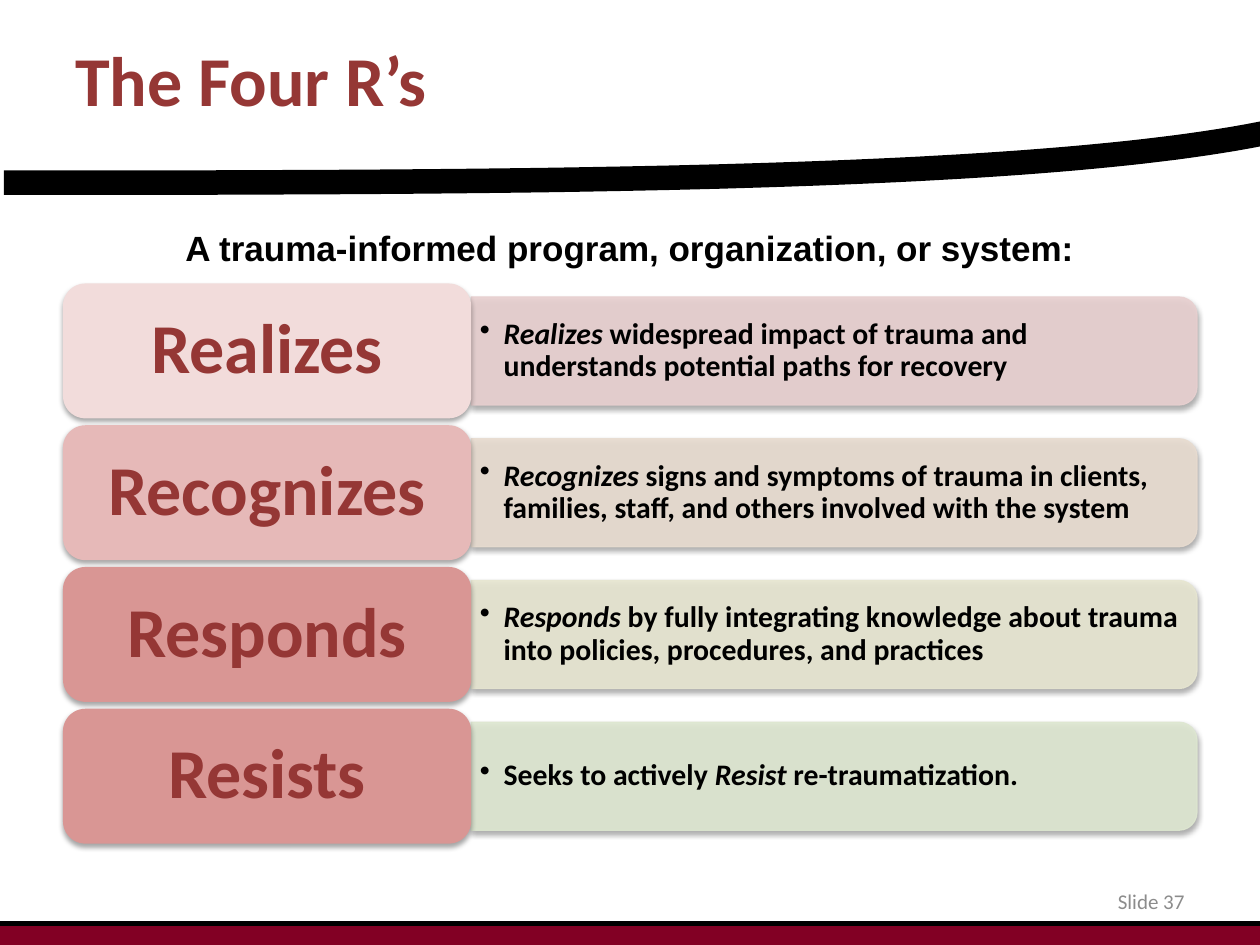
import pptx
import pptx.util
import pptx.dml.color
import pptx.enum.shapes
import pptx.enum.text
import pptx.oxml
from pptx.oxml.ns import nsdecls, qn

Pt = pptx.util.Pt
SHAPE = pptx.enum.shapes.MSO_SHAPE
ALIGN = pptx.enum.text.PP_ALIGN
ANCHOR = pptx.enum.text.MSO_ANCHOR

TITLE = "The Four R’s"
LEAD = "A trauma-informed program, organization, or system:"
PAGE = "Slide 37"
# label, label fill, bar fill, [(text, italic)]
ROWS = [
    ("Realizes", "F2DCDB", "E8D0D0",
     [("Realizes", True),
      (" widespread impact of trauma and understands potential paths for recovery", False)]),
    ("Recognizes", "E6B9B8", "E8DCD0",
     [("Recognizes", True),
      (" signs and symptoms of trauma in clients, families, staff, and others "
       "involved with the system", False)]),
    ("Responds", "D99694", "E7E6D1",
     [("Responds", True),
      (" by fully integrating knowledge about trauma into policies, procedures, "
       "and practices", False)]),
    ("Resists", "D99694", "DEE7D1",
     [("Seeks to actively ", False), ("Resist", True), (" re-traumatization.", False)]),
]
RED, BLACK, GRAY, MAROON = "953735", "000000", "8C8C8C", "820024"

WIDTH, HEIGHT = 720, 540
LEFT, TOP, PITCH = 36, 162, 81
LABEL_W, LABEL_H = 233.3, 77.1
BAR_W, BAR_H = 414.7, 61.7
CURVE = [(2.2, 104.4), (306.7, 104.4), (612, 103.7), (740.9, 72)]  # Bezier points
CURVE_STEPS = 60


def rgb(value):
    return pptx.dml.color.RGBColor.from_string(value)


def xml(tag, inner="", attrs=""):
    return pptx.oxml.parse_xml(f"<a:{tag} {nsdecls('a')} {attrs}>{inner}</a:{tag}>")


def add_shadow(sp):
    sp.shadow.inherit = False
    sp._element.spPr.find(qn("a:effectLst")).append(xml(
        "outerShdw", '<a:srgbClr val="000000"><a:alpha val="35000"/></a:srgbClr>',
        f'blurRad="{Pt(3.1)}" dist="{Pt(1.8)}" dir="5400000" rotWithShape="0"'))


def add_filled(s, kind, x, y, w, h, color):
    sp = s.shapes.add_shape(kind, Pt(x), Pt(y), Pt(w), Pt(h))
    sp.shadow.inherit = False
    sp.fill.solid()
    sp.fill.fore_color.rgb = rgb(color)
    sp.line.fill.background()
    return sp


def write(sp, runs, size, color, bold=True, font="Calibri", align=ALIGN.LEFT,
          anchor=ANCHOR.MIDDLE, inset=(7.2, 3.6), spacing=None):
    """Fill one paragraph with (text, italic) runs and return it."""
    tf = sp.text_frame
    tf.word_wrap = True
    tf.vertical_anchor = anchor
    tf.margin_left = tf.margin_right = Pt(inset[0])
    tf.margin_top = tf.margin_bottom = Pt(inset[1])
    p = tf.paragraphs[0]
    p.alignment = align
    p.line_spacing = spacing
    for text, italic in runs:
        r = p.add_run()
        r.text = text
        r.font.size, r.font.name = Pt(size), font
        r.font.bold, r.font.italic = bold, italic
        r.font.color.rgb = rgb(color)
    return p


def add_text(s, x, y, w, h, runs, size, color, **style):
    sp = s.shapes.add_textbox(Pt(x), Pt(y), Pt(w), Pt(h))
    return write(sp, runs, size, color, **style)


def add_row(s, y, label, label_color, bar_color, runs):
    bar_x, bar_y = LEFT + LABEL_W, y + (LABEL_H - BAR_H) / 2
    # The bar is an upright shape turned a quarter about its centre
    turn = (BAR_W - BAR_H) / 2
    bar = add_filled(s, SHAPE.ROUND_2_SAME_RECTANGLE, bar_x + turn, bar_y - turn,
                     BAR_H, BAR_W, bar_color)
    bar.rotation = 90
    bar.line.color.rgb = rgb(bar_color)
    bar.line.width = Pt(0.75)
    for color in bar._element.spPr.iter(qn("a:srgbClr")):
        color.append(xml("alpha", attrs='val="90000"'))
    add_shadow(bar)

    p = add_text(s, bar_x, y + 10.8, BAR_W - 3, 55.4, runs, 17, BLACK,
                 inset=(5, 2.9), spacing=0.9)
    pPr = p._p.get_or_add_pPr()
    pPr.set("marL", str(Pt(13.5)))
    pPr.set("indent", str(-Pt(13.5)))
    pPr.append(xml("buChar", attrs='char="•"'))

    box = add_filled(s, SHAPE.ROUNDED_RECTANGLE, LEFT, y, LABEL_W, LABEL_H, label_color)
    add_shadow(box)
    write(box, [(label, False)], 40, RED, align=ALIGN.CENTER,
          inset=(12, 6), spacing=0.9)


def add_curve(s):
    points = []
    for i in range(CURVE_STEPS + 1):
        t = i / CURVE_STEPS
        weights = ((1 - t) ** 3, 3 * t * (1 - t) ** 2, 3 * t * t * (1 - t), t ** 3)
        points.append(tuple(Pt(sum(w * c[axis] for w, c in zip(weights, CURVE)))
                            for axis in (0, 1)))
    builder = s.shapes.build_freeform(*points[0])
    builder.add_line_segments(points[1:], close=False)
    sp = builder.convert_to_shape()
    sp.shadow.inherit = False
    sp.fill.background()
    sp.line.color.rgb = rgb(BLACK)
    sp.line.width = Pt(14)


def add_footer(s):
    y = 527.8
    add_filled(s, SHAPE.RECTANGLE, 0, y, WIDTH, HEIGHT - y, MAROON)
    line = s.shapes.add_connector(pptx.enum.shapes.MSO_CONNECTOR.STRAIGHT,
                                  Pt(0), Pt(y), Pt(WIDTH), Pt(y))
    line.line.color.rgb = rgb(BLACK)
    line.line.width = Pt(3)
    line._element.spPr.append(xml("effectLst"))


def main():
    prs = pptx.Presentation()
    prs.slide_width, prs.slide_height = Pt(WIDTH), Pt(HEIGHT)
    s = prs.slides.add_slide(prs.slide_layouts[6])
    add_curve(s)
    add_footer(s)
    add_text(s, LEFT, 0, 648, 90, [(TITLE, False)], 40, RED)
    for i, row in enumerate(ROWS):
        add_row(s, TOP + i * PITCH, *row)
    add_text(s, LEFT, 126, 648, 53, [(LEAD, False)], 20, BLACK, font="Arial",
             align=ALIGN.CENTER, anchor=ANCHOR.TOP)
    add_text(s, 516, 500.5, 168, 28.8, [(PAGE, False)], 12, GRAY, bold=False,
             align=ALIGN.RIGHT)
    prs.save("out.pptx")


if __name__ == "__main__":
    main()
